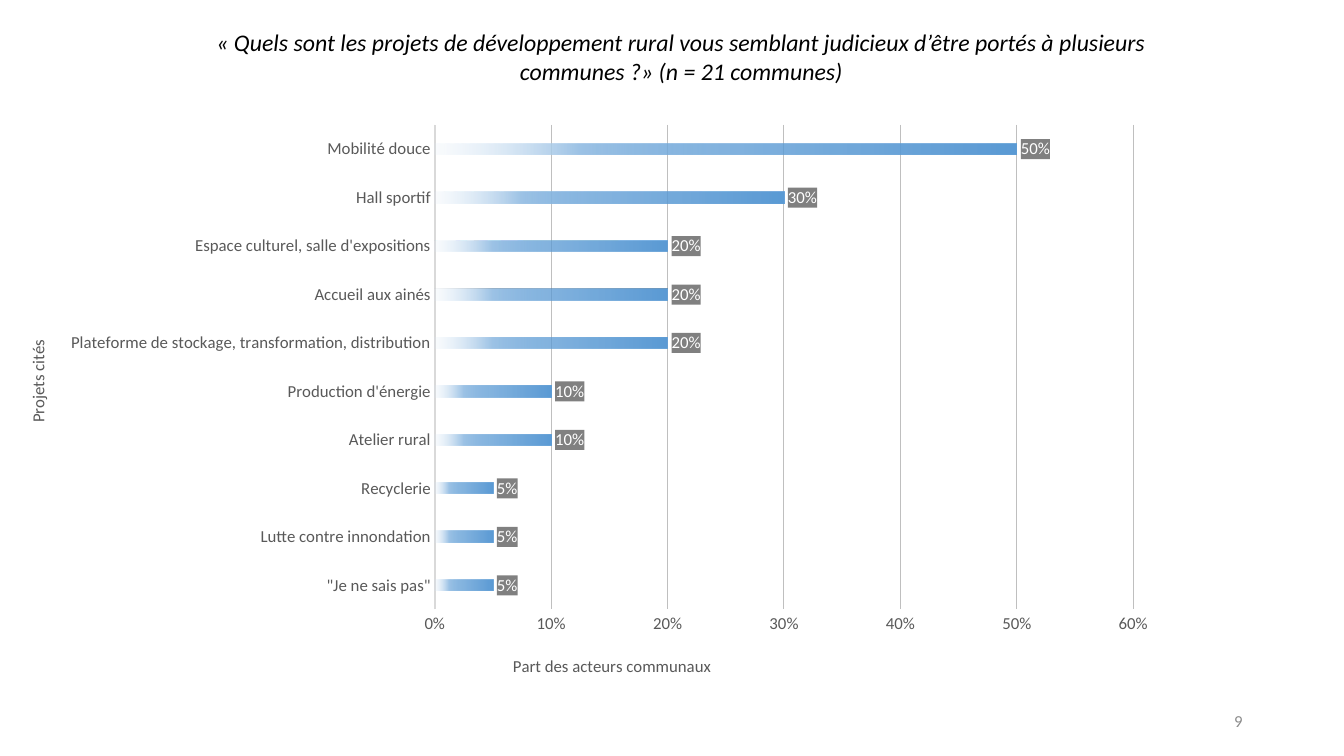
from dataclasses import dataclass

from lxml import etree
from pptx import Presentation
from pptx.chart.data import CategoryChartData
from pptx.dml.color import RGBColor
from pptx.enum.chart import XL_CHART_TYPE, XL_LABEL_POSITION, XL_TICK_MARK
from pptx.enum.text import MSO_ANCHOR, PP_ALIGN
from pptx.oxml import parse_xml
from pptx.oxml.ns import nsdecls, qn
from pptx.util import Inches, Pt

BARS = XL_CHART_TYPE.BAR_CLUSTERED
OUTSIDE = XL_LABEL_POSITION.OUTSIDE_END
NO_TICK = XL_TICK_MARK.NONE
TOP, MIDDLE = MSO_ANCHOR.TOP, MSO_ANCHOR.MIDDLE
CENTER, RIGHT = PP_ALIGN.CENTER, PP_ALIGN.RIGHT

WIDE, HIGH = Inches(13.33), Inches(7.5)
FONT = "Calibri"
HUES = {
    "black": "000000", "text": "595959", "page": "8C8C8C", "white": "FFFFFF",
    "axis": "D9D9D9", "grid": "BFBFBF", "label": "808080",
    "blue": "5B9BD5", "light": "9DC3E6", "pale": "DEEBF7",
}
# Gradient stops: place, colour and opacity in percent
STOPS = [(0, "blue", 100), (51, "blue", 75), (75, "light", 100), (100, "pale", 15)]
SHARES = {
    '"Je ne sais pas"': 0.05,
    "Lutte contre innondation": 0.05,
    "Recyclerie": 0.05,
    "Atelier rural": 0.1,
    "Production d'énergie": 0.1,
    "Plateforme de stockage, transformation, distribution": 0.2,
    "Accueil aux ainés": 0.2,
    "Espace culturel, salle d'expositions": 0.2,
    "Hall sportif": 0.3,
    "Mobilité douce": 0.5,
}


@dataclass
class Box:
    """Left, top, width and height as shares of the slide."""
    x: float
    y: float
    w: float
    h: float

    def place(self) -> tuple[int, int, int, int]:
        return (int(self.x * WIDE), int(self.y * HIGH),
                int(self.w * WIDE), int(self.h * HIGH))


@dataclass
class Note:
    text: str
    box: Box
    size: int
    hue: str
    align: PP_ALIGN
    anchor: MSO_ANCHOR
    slant: bool = False


NOTES = [
    Note("«\u00a0Quels sont les projets de développement rural vous semblant judicieux "
         "d’être portés à plusieurs communes ?» (n = 21 communes)",
         Box(0.142, 0.03, 0.73, 0.09), 17, "black", CENTER, TOP, True),
    Note("9", Box(0.707, 0.927, 0.225, 0.053), 12, "page", RIGHT, MIDDLE),
]


def color(hue: str) -> RGBColor:
    return RGBColor.from_string(HUES[hue])


def style(font, size: int, hue: str, slant: bool = False) -> None:
    font.name, font.size = FONT, Pt(size)
    font.bold, font.italic = False, slant
    font.color.rgb = color(hue)


def write(slide, note: Note) -> None:
    frame = slide.shapes.add_textbox(*note.box.place()).text_frame
    frame.word_wrap = True
    frame.vertical_anchor = note.anchor
    frame.text = note.text
    line = frame.paragraphs[0]
    line.alignment = note.align
    style(line.runs[0].font, note.size, note.hue, note.slant)


def lay_out(node: etree._Element, index: int, **parts: float) -> None:
    """Fix a chart part at shares of the chart's size."""
    for old in node.findall(qn("c:layout")):
        node.remove(old)
    inner = '<c:layoutTarget val="inner"/>' if "w" in parts else ""
    modes = "".join(f'<c:{key}Mode val="edge"/>' for key in "xy")
    sizes = "".join(f'<c:{key} val="{val}"/>' for key, val in parts.items())
    node.insert(index, parse_xml(
        f'<c:layout {nsdecls("c")}><c:manualLayout>{inner}{modes}{sizes}'
        "</c:manualLayout></c:layout>"))


def set_axis(axis, title: str, x: float, y: float, turn: int) -> None:
    axis.major_tick_mark = axis.minor_tick_mark = NO_TICK
    style(axis.tick_labels.font, 12, "text")
    head = axis.axis_title
    head.text_frame.text = title
    style(head.text_frame.paragraphs[0].runs[0].font, 12, "text")
    body = head._element.find(".//" + qn("a:bodyPr"))
    body.set("rot", str(turn * 60000))
    body.set("vert", "horz")
    lay_out(head._element, 1, x=x, y=y)


def fade(fill) -> None:
    fill.gradient()
    fill.gradient_angle = 180
    stops = fill._xPr.find(".//" + qn("a:gsLst"))
    for old in list(stops):
        stops.remove(old)
    for spot, hue, alpha in STOPS:
        stops.append(parse_xml(
            f'<a:gs {nsdecls("a")} pos="{spot * 1000}"><a:srgbClr val="{HUES[hue]}">'
            f'<a:alpha val="{alpha * 1000}"/></a:srgbClr></a:gs>'))


def add_bars(slide, box: Box) -> None:
    data = CategoryChartData(number_format="0%")
    data.categories = list(SHARES)
    data.add_series("Series 1", list(SHARES.values()))
    chart = slide.shapes.add_chart(BARS, *box.place(), data).chart
    chart.has_legend = chart.has_title = False
    style(chart.font, 10, "black")

    # Axes and grid
    cats, vals = chart.category_axis, chart.value_axis
    set_axis(cats, "Projets cités", 0.02, 0.386, -90)
    set_axis(vals, "Part des acteurs communaux", 0.435, 0.93, 0)
    cats.has_major_gridlines = False
    cats.format.line.color.rgb = color("axis")
    cats.format.line.width = Pt(1.5)
    vals.minimum_scale, vals.maximum_scale, vals.major_unit = 0, 0.6, 0.1
    vals.tick_labels.number_format = "0%"
    vals.tick_labels.number_format_is_linked = False
    vals.format.line.fill.background()
    grid = vals.major_gridlines.format.line
    grid.color.rgb, grid.width = color("grid"), Pt(0.75)
    lay_out(cats._element.getparent(), 0, x=0.371, y=0.02, w=0.596, h=0.838)

    # Bars
    plot = chart.plots[0]
    plot.gap_width, plot.overlap = 326, -58
    plot.vary_by_categories = False
    fade(plot.series[0].format.fill)

    # Value labels on grey
    plot.has_data_labels = True
    labels = plot.data_labels
    labels.show_value = True
    labels.position = OUTSIDE
    labels.number_format, labels.number_format_is_linked = "0%", False
    style(labels.font, 12, "white")
    labels._element.find(qn("c:numFmt")).addnext(parse_xml(
        f'<c:spPr {nsdecls("c", "a")}><a:solidFill><a:srgbClr val="{HUES["label"]}"/>'
        "</a:solidFill></c:spPr>"))


def main() -> None:
    deck = Presentation()
    deck.slide_width, deck.slide_height = WIDE, HIGH
    slide = deck.slides.add_slide(deck.slide_layouts[6])
    add_bars(slide, Box(0, 0.15, 0.872, 0.765))
    for note in NOTES:
        write(slide, note)
    deck.save("out.pptx")


if __name__ == "__main__":
    main()
